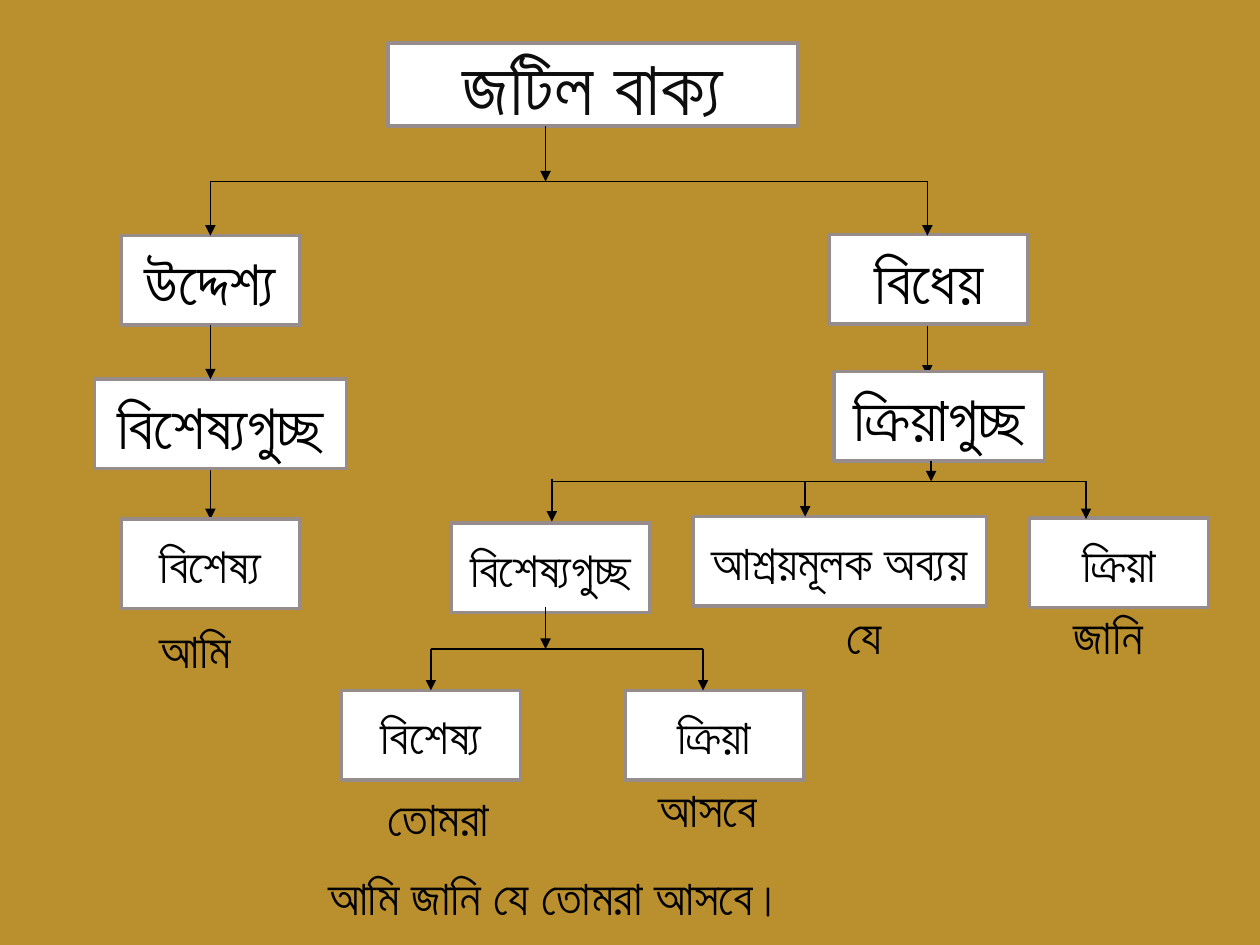
from pptx import Presentation
from pptx.dml.color import RGBColor
from pptx.enum.shapes import MSO_CONNECTOR, MSO_SHAPE
from pptx.enum.text import MSO_ANCHOR, MSO_AUTO_SIZE, PP_ALIGN
from pptx.oxml.ns import qn
from pptx.util import Inches, Pt
from lxml.etree import SubElement

OCHRE = RGBColor(0xBA, 0x8F, 0x2D)
WHITE = RGBColor(0xFF, 0xFF, 0xFF)
GREY = RGBColor(0x96, 0x8C, 0x8C)
BLACK = RGBColor(0, 0, 0)
TITLE_INK = RGBColor(0x0D, 0x0D, 0x0D)
FONT = "Arial"
# The letter yya as one code point, which text normalisation splits in two
YYA = chr(0x09DF)
YYA_SPLIT = chr(0x09AF) + chr(0x09BC)

prs = Presentation()
prs.slide_width, prs.slide_height = Inches(10), Inches(7.5)
slide = prs.slides.add_slide(prs.slide_layouts[6])
slide.background.fill.solid()
slide.background.fill.fore_color.rgb = OCHRE


def write(shape, text, size, color=BLACK):
    shape.text_frame.word_wrap = True
    paragraph = shape.text_frame.paragraphs[0]
    paragraph.text = text.replace(YYA_SPLIT, YYA)
    paragraph.font.name = FONT
    paragraph.font.size = Pt(size)
    paragraph.font.color.rgb = color
    return paragraph


def add_line(x1, y1, x2, y2, arrow=True):
    line = slide.shapes.add_connector(
        MSO_CONNECTOR.STRAIGHT, Inches(x1), Inches(y1), Inches(x2), Inches(y2))
    line.line.color.rgb = BLACK
    line.line.width = Pt(0.75)
    if arrow:
        SubElement(line.line._get_or_add_ln(), qn("a:tailEnd"), type="triangle")
    SubElement(line._element.spPr, qn("a:effectLst"))


# Arrows that run partly behind the boxes: x, top, bottom
for x, top, bottom in [(7.36, 2.55, 2.98), (1.67, 3.53, 4.12)]:
    add_line(x, top, x, bottom)

# Boxes of the sentence tree: text, left, top, width, height, size, colour
BOX_H = 0.71
boxes = [
    ("জটিল বাক্য", 3.08, 0.34, 3.25, 0.66, 44, TITLE_INK),
    ("উদ্দেশ্য", 0.96, 1.87, 1.42, BOX_H, 36, BLACK),
    ("বিধেয়", 6.58, 1.86, 1.58, BOX_H, 36, BLACK),
    ("বিশেষ্যগুচ্ছ", 0.75, 3.01, 2, BOX_H, 36, BLACK),
    ("ক্রিয়াগুচ্ছ", 6.62, 2.95, 1.67, BOX_H, 36, BLACK),
    ("বিশেষ্য", 0.96, 4.12, 1.42, BOX_H, 28, BLACK),
    ("বিশেষ্যগুচ্ছ", 3.58, 4.15, 1.58, BOX_H, 28, BLACK),
    ("আশ্রয়মূলক অব্যয়", 5.5, 4.1, 2.33, BOX_H, 28, BLACK),
    ("ক্রিয়া", 8.17, 4.11, 1.42, BOX_H, 28, BLACK),
    ("বিশেষ্য", 2.71, 5.48, 1.42, BOX_H, 28, BLACK),
    ("ক্রিয়া", 4.96, 5.48, 1.42, BOX_H, 28, BLACK),
]
for text, left, top, width, height, size, color in boxes:
    box = slide.shapes.add_shape(
        MSO_SHAPE.FLOWCHART_PROCESS,
        Inches(left), Inches(top), Inches(width), Inches(height))
    box.shadow.inherit = False
    box.fill.solid()
    box.fill.fore_color.rgb = WHITE
    box.line.color.rgb = GREY
    box.line.width = Pt(2)
    box.text_frame.vertical_anchor = MSO_ANCHOR.MIDDLE
    label = write(box, text, size, color)
    label.alignment = PP_ALIGN.CENTER
    label.font.bold = color == TITLE_INK

# Horizontal branch bars: left, right, y
for left, right, y in [(1.67, 7.36, 1.44), (4.38, 8.63, 3.82), (3.42, 5.58, 5.15)]:
    add_line(left, y, right, y, arrow=False)

# Downward arrows: x, top, bottom
arrows = [
    (4.33, 1, 1.44), (1.67, 1.44, 1.87), (7.36, 1.44, 1.87), (1.67, 2.58, 3.01),
    (7.39, 3.66, 3.82), (4.38, 3.8, 4.14), (6.39, 3.82, 4.1), (8.62, 3.82, 4.12),
    (4.33, 4.82, 5.15), (3.42, 5.15, 5.48), (5.58, 5.15, 5.48),
]
for x, top, bottom in arrows:
    add_line(x, top, x, bottom)

# Example words under the leaves, then the whole sentence
words = [
    ("আমি", 1.17, 4.87, 0.83, 0.57),
    ("জানি", 8.42, 4.76, 0.83, 0.57),
    ("যে", 6.62, 4.76, 0.5, 0.57),
    ("তোমরা", 2.98, 6.2, 1.12, 0.57),
    ("আসবে", 5.13, 6.13, 1.08, 0.57),
    ("আমি জানি যে তোমরা আসবে।", 2.51, 6.83, 4.4, 1.04),
]
for text, left, top, width, height in words:
    word = slide.shapes.add_textbox(
        Inches(left), Inches(top), Inches(width), Inches(height))
    write(word, text, 28)
    word.text_frame.auto_size = MSO_AUTO_SIZE.SHAPE_TO_FIT_TEXT

prs.save("out.pptx")
